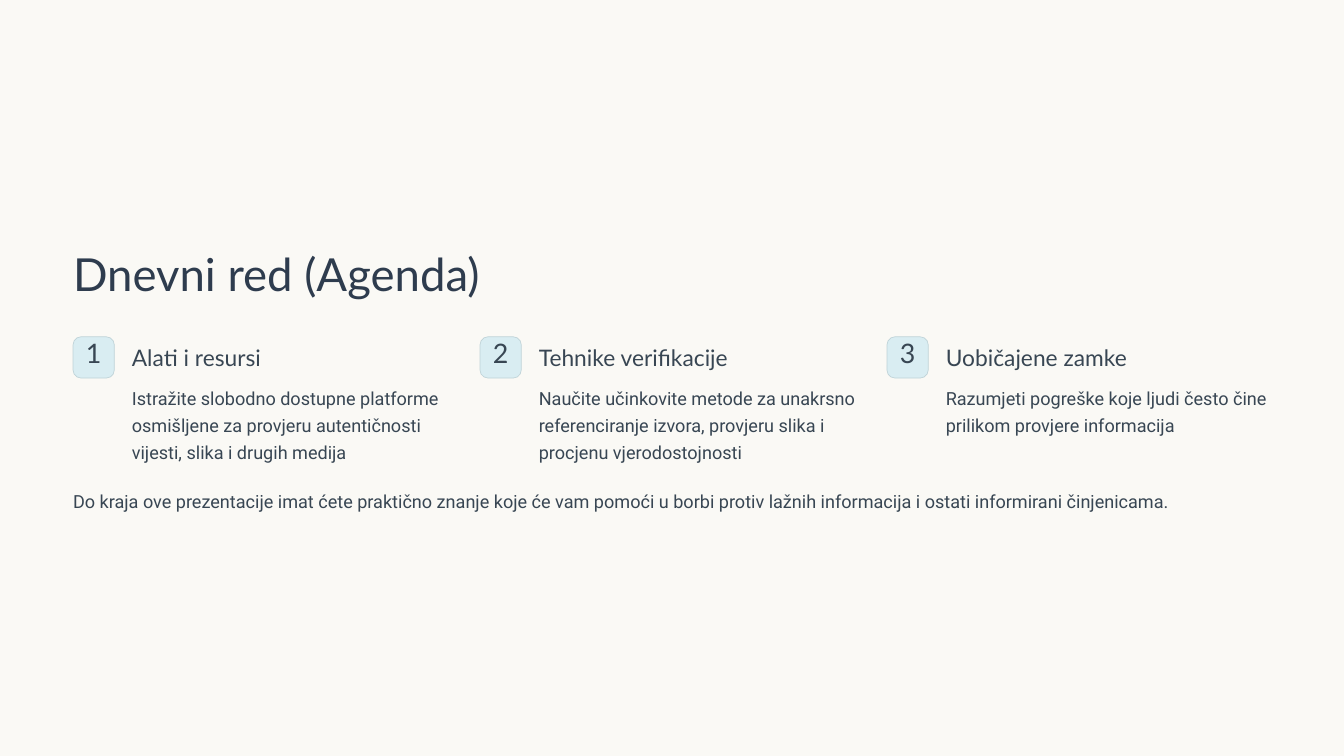
from dataclasses import dataclass

from pptx import Presentation
from pptx.dml.color import RGBColor
from pptx.enum.shapes import MSO_SHAPE
from pptx.enum.text import MSO_ANCHOR, MSO_AUTO_SIZE, PP_ALIGN
from pptx.util import Inches, Pt


@dataclass(frozen=True)
class TextStyle:
    font: str
    size: float
    leading: float
    color: RGBColor


INK = RGBColor(0x38, 0x46, 0x53)


@dataclass(frozen=True)
class Theme:
    background: RGBColor = RGBColor(0xFA, 0xF9, 0xF5)
    badge_fill: RGBColor = RGBColor(0xD9, 0xED, 0xF2)
    badge_line: RGBColor = RGBColor(0xBF, 0xD3, 0xD8)
    title: TextStyle = TextStyle("Lato", 39, 48.5, RGBColor(0x2E, 0x3C, 0x4E))
    number: TextStyle = TextStyle("Lato", 23, 23, INK)
    heading: TextStyle = TextStyle("Lato", 19.5, 24, INK)
    body: TextStyle = TextStyle("Roboto", 15.5, 23, INK)


THEME = Theme()
MARGIN = 0.87
COLUMN_PITCH = 4.845
TEXT_INDENT = 0.7
BADGE_TOP = 4.01
BADGE_SIDE = 0.49

AGENDA = [
    ("Alati i resursi",
     "Istražite slobodno dostupne platforme osmišljene za provjeru "
     "autentičnosti vijesti, slika i drugih medija"),
    ("Tehnike verifikacije",
     "Naučite učinkovite metode za unakrsno referenciranje izvora, "
     "provjeru slika i procjenu vjerodostojnosti"),
    ("Uobičajene zamke",
     "Razumjeti pogreške koje ljudi često čine prilikom provjere informacija"),
]
CLOSING = (
    "Do kraja ove prezentacije imat ćete praktično znanje koje će vam pomoći "
    "u borbi protiv lažnih informacija i ostati informirani činjenicama."
)


def write_text(frame, text, style, align=PP_ALIGN.LEFT, inset_top=0):
    frame.margin_left = frame.margin_right = frame.margin_bottom = 0
    frame.margin_top = Inches(inset_top)
    frame.auto_size = MSO_AUTO_SIZE.NONE
    frame.word_wrap = True
    frame.vertical_anchor = MSO_ANCHOR.TOP
    paragraph = frame.paragraphs[0]
    paragraph.alignment = align
    paragraph.line_spacing = Pt(style.leading)
    paragraph.space_before = Pt(0)
    run = paragraph.add_run()
    run.text = text
    run.font.name = style.font
    run.font.size = Pt(style.size)
    run.font.color.rgb = style.color


def add_title(slide, text):
    title = slide.shapes.title
    title.left, title.top = Inches(MARGIN), Inches(2.9)
    title.width, title.height = Inches(5.43), Inches(0.68)
    write_text(title.text_frame, text, THEME.title)


def add_text(slide, text, style, left, top, width, height):
    label = slide.shapes.add_textbox(
        Inches(left), Inches(top), Inches(width), Inches(height))
    write_text(label.text_frame, text, style)


def add_badge(slide, number, left):
    badge = slide.shapes.add_shape(
        MSO_SHAPE.ROUNDED_RECTANGLE, Inches(left), Inches(BADGE_TOP),
        Inches(BADGE_SIDE), Inches(BADGE_SIDE))
    badge.adjustments[0] = 0.19
    badge.shadow.inherit = False
    badge.fill.solid()
    badge.fill.fore_color.rgb = THEME.badge_fill
    badge.line.color.rgb = THEME.badge_line
    badge.line.width = Pt(0.6)
    write_text(badge.text_frame, str(number), THEME.number,
               PP_ALIGN.CENTER, inset_top=0.04)


def add_agenda_item(slide, index, heading, description):
    left = MARGIN + index * COLUMN_PITCH
    add_badge(slide, index + 1, left)
    text_left = left + TEXT_INDENT
    add_text(slide, heading, THEME.heading, text_left, 4.09, 2.84, 0.34)
    add_text(slide, description, THEME.body, text_left, 4.55, 3.87, 0.98)


def main():
    presentation = Presentation()
    presentation.slide_width = Inches(16)
    presentation.slide_height = Inches(9)
    slide = presentation.slides.add_slide(presentation.slide_layouts[5])
    slide.background.fill.solid()
    slide.background.fill.fore_color.rgb = THEME.background

    add_title(slide, "Dnevni red (Agenda)")
    for index, (heading, description) in enumerate(AGENDA):
        add_agenda_item(slide, index, heading, description)
    add_text(slide, CLOSING, THEME.body, MARGIN, 5.78, 14.26, 0.33)

    presentation.save("out.pptx")


if __name__ == "__main__":
    main()
